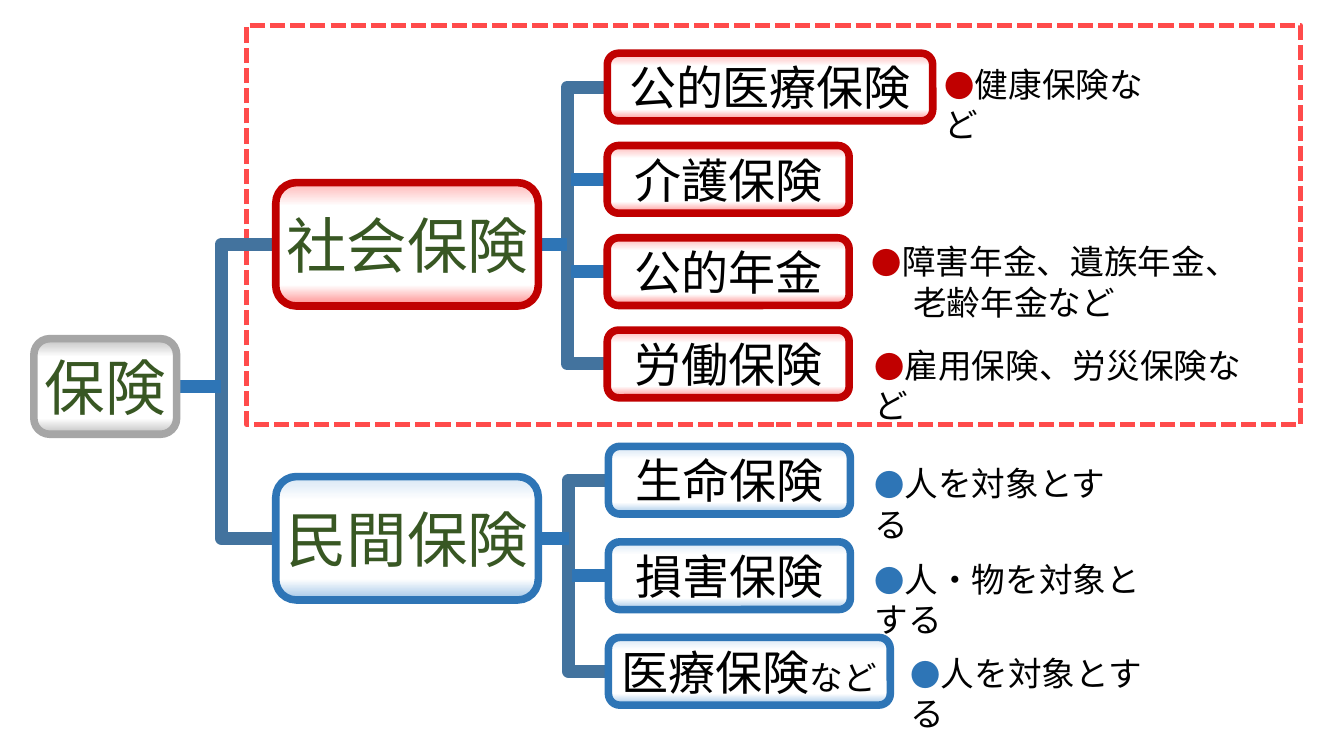
from dataclasses import dataclass

from lxml.etree import SubElement
from pptx import Presentation
from pptx.dml.color import RGBColor
from pptx.enum.dml import MSO_LINE
from pptx.enum.shapes import MSO_CONNECTOR, MSO_SHAPE
from pptx.enum.text import MSO_ANCHOR, PP_ALIGN
from pptx.oxml.ns import qn
from pptx.util import Inches, Pt


@dataclass(frozen=True)
class Tone:
    line: str
    top: str
    bottom: str


@dataclass(frozen=True)
class Theme:
    font: str = "Noto Sans CJK JP"
    ink: str = "000000"
    heading: str = "385723"
    white: str = "FFFFFF"
    frame: str = "FF4B4B"
    bracket: str = "43739E"
    stub: str = "2E75B6"
    red: Tone = Tone("C00000", "FFB4B4", "FF8989")
    blue: Tone = Tone("2E75B6", "D5E5F4", "9DC3E6")
    gray: Tone = Tone("A6A6A6", "BFBFBF", "BFBFBF")
    heading_size: int = 36
    label_size: int = 28
    note_size: int = 20
    bullet_size: int = 18


@dataclass(frozen=True)
class Insurance:
    """One leaf box; note_at is the note's offset from the box's top right corner."""
    label: str
    width: float = 20
    suffix: str = ""
    note: tuple = ()
    note_at: tuple = (1, 0.9)
    note_width: float = 22.3


THEME = Theme()
# All lengths are cells of a grid with ten columns and rows to the inch.
COLUMNS, ROWS = 111.1, 62.5
LEAF_HEIGHT = 5.6
BRACKET_INSET = 3.3
ROOT_BOX = (2.8, 28, 11.8, 7.9)
FRAME_BOX = (20.4, 2.1, 87.1, 33)
HEAD_SIZE = (21.7, 10.2)
SOCIAL = (
    Insurance("公的医療保険", 26.9, note=("健康保険など",), note_at=(0, 0.4), note_width=20.5),
    Insurance("介護保険"),
    Insurance("公的年金", note=("障害年金、遺族年金、", "老齢年金など"),
              note_at=(0.9, -0.2), note_width=30.7),
    Insurance("労働保険", note=("雇用保険、労災保険など",), note_at=(1.1, 0.7), note_width=33.6),
)
PRIVATE = (
    Insurance("生命保険", note=("人を対象とする",)),
    Insurance("損害保険", note=("人・物を対象とする",), note_width=26.5),
    Insurance("医療保険", 23.3, "など", ("人を対象とする",), (0.7, 0.8)),
)


def cells(count):
    return Inches(count / 10)


def color(code):
    return RGBColor.from_string(code)


def add_run(paragraph, text, size, ink):
    run = paragraph.add_run()
    run.text = text
    run.font.size = Pt(size)
    run.font.name = THEME.font
    run.font.color.rgb = color(ink)
    SubElement(run.font._element, qn("a:ea"), typeface=THEME.font)


def set_line(shape, ink, width):
    shape.line.color.rgb = color(ink)
    shape.line.width = Pt(width)


def fill_sheen(shape, tone):
    """Fill white, tinted towards the top and bottom edges."""
    shape.fill.gradient()
    shape.fill.gradient_angle = 270
    stops = shape._element.spPr.find(qn("a:gradFill")).find(qn("a:gsLst"))
    for stop in list(stops):
        stops.remove(stop)
    sheen = ((0, tone.top), (19, THEME.white), (83, THEME.white), (100, tone.bottom))
    for percent, code in sheen:
        stop = SubElement(stops, qn("a:gs"), pos=str(percent * 1000))
        SubElement(stop, qn("a:srgbClr"), val=code)


def add_box(slide, box, tone, runs):
    shape = slide.shapes.add_shape(MSO_SHAPE.ROUNDED_RECTANGLE, *map(cells, box))
    shape.shadow.inherit = False
    fill_sheen(shape, tone)
    set_line(shape, tone.line, 4.5)
    frame = shape.text_frame
    frame.margin_left = frame.margin_right = frame.margin_top = frame.margin_bottom = 0
    frame.vertical_anchor = MSO_ANCHOR.MIDDLE
    paragraph = frame.paragraphs[0]
    paragraph.alignment = PP_ALIGN.CENTER
    for run in runs:
        add_run(paragraph, *run)


def add_heading(slide, box, tone, text):
    add_box(slide, box, tone, [(text, THEME.heading_size, THEME.heading)])


def add_stub(slide, left, right, middle):
    stub = slide.shapes.add_connector(
        MSO_CONNECTOR.STRAIGHT, *map(cells, (left, middle, right, middle)))
    set_line(stub, THEME.stub, 8)
    SubElement(stub._element.spPr, qn("a:effectLst"))


def add_bracket(slide, left, right, top, bottom):
    builder = slide.shapes.build_freeform(cells(right), cells(top))
    corners = [(left, top), (left, bottom), (right, bottom)]
    builder.add_line_segments([(cells(x), cells(y)) for x, y in corners], close=False)
    bracket = builder.convert_to_shape()
    bracket.shadow.inherit = False
    bracket.fill.background()
    set_line(bracket, THEME.bracket, 7.75)


def add_note(slide, left, top, insurance, tone):
    box = slide.shapes.add_textbox(*map(cells, (left, top, insurance.note_width, 4.4)))
    frame = box.text_frame
    frame.word_wrap = True
    for index, line in enumerate(insurance.note):
        if index:
            paragraph = frame.add_paragraph()
            paragraph._p.get_or_add_pPr().set("marL", str(cells(3.4)))
        else:
            paragraph = frame.paragraphs[0]
            add_run(paragraph, "●", THEME.bullet_size, tone.line)
        add_run(paragraph, line, THEME.note_size, THEME.ink)


def add_leaf(slide, left, top, insurance, tone):
    runs = [(insurance.label, THEME.label_size, THEME.ink)]
    if insurance.suffix:
        runs.append((insurance.suffix, THEME.note_size, THEME.ink))
    add_box(slide, (left, top, insurance.width, LEAF_HEIGHT), tone, runs)
    if insurance.note:
        right, down = insurance.note_at
        add_note(slide, left + insurance.width + right, top + down, insurance, tone)


def add_branch(slide, head, leaf_left, leaf_top, pitch, title, insurances, tone):
    """Draw a head box at its left and top, linked to a column of leaves."""
    head_left, head_top = head
    width, height = HEAD_SIZE
    tops = [leaf_top + pitch * row for row in range(len(insurances))]
    middles = [top + LEAF_HEIGHT / 2 for top in tops]
    spine = leaf_left - BRACKET_INSET
    add_bracket(slide, spine, leaf_left, middles[0], middles[-1])
    add_stub(slide, head_left + width, spine, head_top + height / 2)
    for middle in middles[1:-1]:
        add_stub(slide, spine + 0.3, leaf_left, middle)
    for top, insurance in zip(tops, insurances):
        add_leaf(slide, leaf_left, top, insurance, tone)
    add_heading(slide, (head_left, head_top, *HEAD_SIZE), tone, title)


def add_root(slide, box, heads):
    left, top, width, height = box
    spine = left + width + 3.7
    middles = [head_top + HEAD_SIZE[1] / 2 for _, head_top in heads]
    add_bracket(slide, spine, heads[0][0], *middles)
    add_stub(slide, left + width, spine, top + height / 2)
    add_heading(slide, box, THEME.gray, "保険")


def add_frame(slide, box):
    frame = slide.shapes.add_shape(MSO_SHAPE.RECTANGLE, *map(cells, box))
    frame.shadow.inherit = False
    frame.fill.solid()
    frame.fill.fore_color.rgb = color(THEME.white)
    set_line(frame, THEME.frame, 3)
    frame.line.dash_style = MSO_LINE.SQUARE_DOT


def main():
    presentation = Presentation()
    presentation.slide_width, presentation.slide_height = cells(COLUMNS), cells(ROWS)
    slide = presentation.slides.add_slide(presentation.slide_layouts[6])
    heads = ((22.8, 15.1), (22.8, 39.4))
    add_frame(slide, FRAME_BOX)
    add_root(slide, ROOT_BOX, heads)
    add_branch(slide, heads[0], 50.2, 4.4, 7.63, "社会保険", SOCIAL, THEME.red)
    add_branch(slide, heads[1], 50.3, 36.9, 7.9, "民間保険", PRIVATE, THEME.blue)
    presentation.save("out.pptx")


if __name__ == "__main__":
    main()
